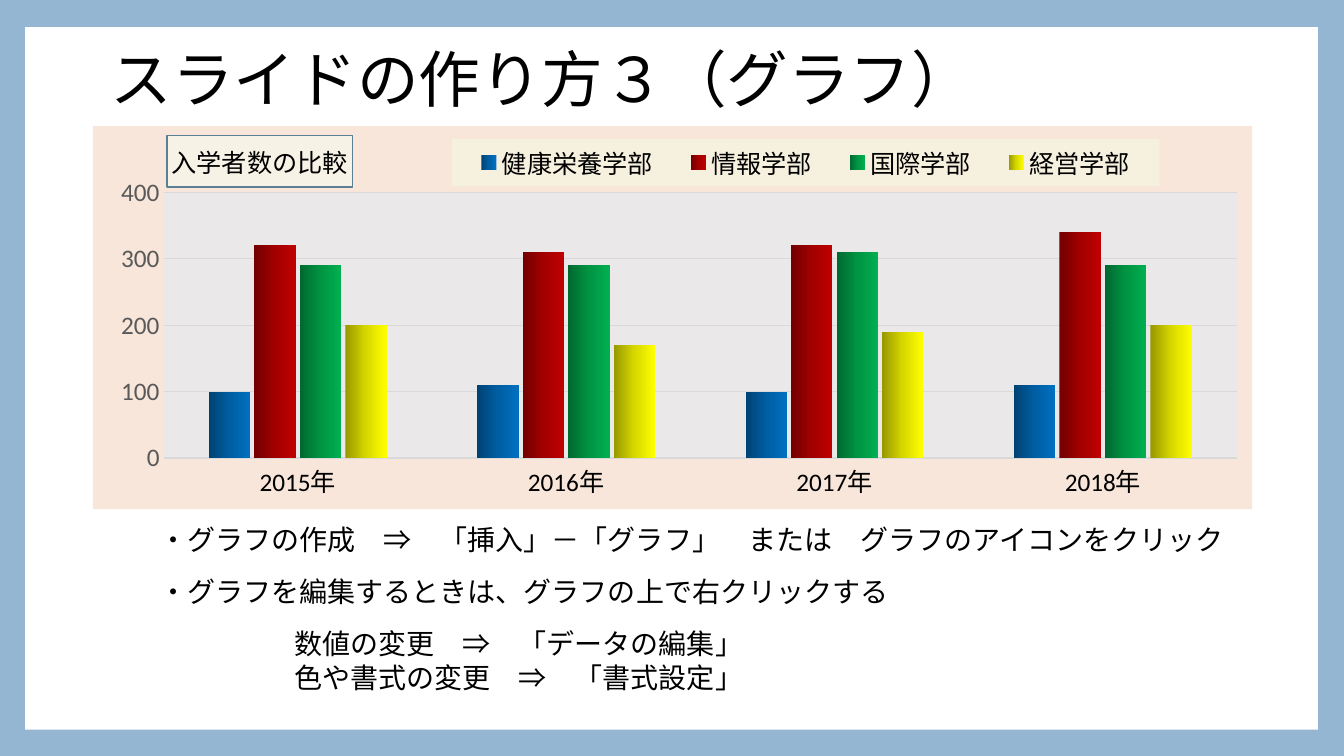
from pptx import Presentation
from pptx.chart.data import CategoryChartData
from pptx.dml.color import RGBColor
from pptx.enum.chart import XL_CHART_TYPE, XL_LEGEND_POSITION, XL_TICK_MARK
from pptx.enum.shapes import MSO_SHAPE
from pptx.enum.text import MSO_ANCHOR
from pptx.oxml import parse_xml
from pptx.util import Inches, Pt

CLUSTERED = XL_CHART_TYPE.COLUMN_CLUSTERED
LEGEND_BOTTOM = XL_LEGEND_POSITION.BOTTOM
NO_TICK = XL_TICK_MARK.NONE
RECTANGLE = MSO_SHAPE.RECTANGLE
MIDDLE, TOP = MSO_ANCHOR.MIDDLE, MSO_ANCHOR.TOP

FONT = "Calibri"
BLACK = RGBColor(0x00, 0x00, 0x00)
WHITE = RGBColor(0xFF, 0xFF, 0xFF)
FRAME_BLUE = RGBColor(0x94, 0xB6, 0xD2)
AXIS_GREY = RGBColor(0x59, 0x59, 0x59)
GRID_GREY = RGBColor(0xD9, 0xD9, 0xD9)
CHART_PEACH = RGBColor(0xF8, 0xE6, 0xDA)
PLOT_GREY = RGBColor(0xEA, 0xE8, 0xE8)
LEGEND_CREAM = RGBColor(0xF6, 0xF0, 0xDF)
CAPTION_CREAM = RGBColor(0xF6, 0xF2, 0xE6)
CAPTION_EDGE = RGBColor(0x5B, 0x7F, 0x95)

YEARS = ["2015年", "2016年", "2017年", "2018年"]
FACULTIES = [
    ("健康栄養学部", (100, 110, 100, 110), ("004272", "005EA2", "0070C0")),
    ("情報学部", (320, 310, 320, 340), ("720000", "A20000", "C00000")),
    ("国際学部", (290, 290, 310, 290), ("00682F", "009443", "00B050")),
    ("経営学部", (200, 170, 190, 200), ("979700", "D7D700", "FFFF00")),
]
NOTES = [
    ((1.48, 5.13, 10.94, 0.44),
     ["・グラフの作成　⇒　「挿入」－「グラフ」　または　グラフのアイコンをクリック"]),
    ((1.48, 5.65, 9.09, 0.44),
     ["・グラフを編集するときは、グラフの上で右クリックする"]),
    ((2.82, 6.17, 7.75, 0.77),
     ["数値の変更　⇒　「データの編集」", "色や書式の変更　⇒　「書式設定」"]),
]

NS = ('xmlns:c="http://schemas.openxmlformats.org/drawingml/2006/chart" '
      'xmlns:a="http://schemas.openxmlformats.org/drawingml/2006/main"')


def set_font(font, size, color=BLACK):
    font.color.rgb = color
    for name, value in {"name": FONT, "size": Pt(size), "bold": False}.items():
        setattr(font, name, value)


def solid_properties(color):
    """Chart part properties: a plain fill without a line."""
    return parse_xml(
        f'<c:spPr {NS}><a:solidFill><a:srgbClr val="{color}"/></a:solidFill>'
        '<a:ln><a:noFill/></a:ln></c:spPr>')


def manual_layout(x, y, size=None, inner=False):
    """Chart part layout, in fractions of the whole chart."""
    target = '<c:layoutTarget val="inner"/>' if inner else ""
    places = {"x": x, "y": y}
    if size:
        places.update(zip("wh", size))
    modes = '<c:xMode val="edge"/><c:yMode val="edge"/>'
    values = "".join(f'<c:{key} val="{value}"/>' for key, value in places.items())
    return parse_xml(f"<c:layout {NS}><c:manualLayout>{target}{modes}{values}"
                     "</c:manualLayout></c:layout>")


def drop_layout(part):
    for layout in part.xpath("./c:layout"):
        part.remove(layout)


def shade_columns(series, shades):
    stops = "".join(
        f'<a:gs pos="{pos}"><a:srgbClr val="{shade}"/></a:gs>'
        for pos, shade in zip((0, 50000, 100000), shades))
    series.format.fill.background()
    no_fill = series.format.fill._xPr.find(
        "{http://schemas.openxmlformats.org/drawingml/2006/main}noFill")
    no_fill.getparent().replace(no_fill, parse_xml(
        f'<a:gradFill {NS}><a:gsLst>{stops}</a:gsLst><a:lin ang="0" scaled="0"/></a:gradFill>'))


def style_axes(chart):
    years, students = chart.category_axis, chart.value_axis
    for axis, color in ((years, BLACK), (students, AXIS_GREY)):
        axis.major_tick_mark = axis.minor_tick_mark = NO_TICK
        set_font(axis.tick_labels.font, 18, color)
    scale = {"minimum_scale": 0, "maximum_scale": 400, "major_unit": 100,
             "has_major_gridlines": True}
    for name, value in scale.items():
        setattr(students, name, value)
    students.format.line.fill.background()
    for line in (years.format.line, students.major_gridlines.format.line):
        line.color.rgb = GRID_GREY
        line.width = Pt(0.75)


def style_caption(chart):
    chart.has_title = True
    caption = chart.chart_title
    caption.text_frame.text = "入学者数の比較"
    set_font(caption.text_frame.paragraphs[0].runs[0].font, 18)
    caption.format.fill.solid()
    caption.format.fill.fore_color.rgb = CAPTION_CREAM
    caption.format.line.color.rgb = CAPTION_EDGE
    caption.format.line.width = Pt(1)
    element = caption._element
    drop_layout(element)
    element.xpath("./c:tx")[0].addnext(manual_layout(0.064, 0.024))


def style_legend(chart):
    chart.has_legend = True
    legend = chart.legend
    legend.position = LEGEND_BOTTOM
    legend.include_in_layout = False
    set_font(legend.font, 18)
    element = legend._element
    drop_layout(element)
    element.xpath("./c:legendPos")[0].addnext(
        manual_layout(0.31, 0.034, (0.61, 0.123)))
    element.xpath("./c:overlay")[0].addnext(solid_properties(LEGEND_CREAM))


def add_enrolment_chart(slide, box):
    data = CategoryChartData()
    data.categories = YEARS
    for name, students, _ in FACULTIES:
        data.add_series(name, students)
    chart = slide.shapes.add_chart(CLUSTERED, *map(Inches, box), data).chart
    set_font(chart.font, 10)
    columns = chart.plots[0]
    for name, value in {"gap_width": 219, "overlap": -10,
                        "vary_by_categories": False}.items():
        setattr(columns, name, value)
    for series, (_, _, shades) in zip(columns.series, FACULTIES):
        shade_columns(series, shades)
    style_axes(chart)
    style_caption(chart)
    style_legend(chart)

    space = chart._chartSpace
    plot_area = space.xpath("./c:chart/c:plotArea")[0]
    drop_layout(plot_area)
    plot_area.insert(0, manual_layout(0.061, 0.173, (0.926, 0.694), inner=True))
    plot_area.append(solid_properties(PLOT_GREY))
    space.xpath("./c:chart")[0].addnext(solid_properties(CHART_PEACH))


def add_text(slide, box, lines, size, anchor=TOP, spacing=None):
    frame = slide.shapes.add_textbox(*map(Inches, box)).text_frame
    frame.word_wrap = True
    frame.vertical_anchor = anchor
    frame.text = "\n".join(lines)
    for paragraph in frame.paragraphs:
        paragraph.line_spacing = spacing
        set_font(paragraph.runs[0].font, size)


def add_backdrop(slide, box):
    slide.background.fill.solid()
    slide.background.fill.fore_color.rgb = FRAME_BLUE
    page = slide.shapes.add_shape(RECTANGLE, *map(Inches, box))
    page.shadow.inherit = False
    page.fill.solid()
    page.fill.fore_color.rgb = WHITE
    page.line.fill.background()


def main():
    deck = Presentation()
    deck.slide_width, deck.slide_height = Inches(13.33), Inches(7.5)
    slide = deck.slides.add_slide(deck.slide_layouts[6])
    add_backdrop(slide, (0.25, 0.27, 12.82, 6.97))
    add_text(slide, (1, 0.3, 11.33, 1.04), ["スライドの作り方３（グラフ）"], 44, MIDDLE, 0.9)
    add_enrolment_chart(slide, (0.92, 1.25, 11.5, 3.8))
    for box, lines in NOTES:
        add_text(slide, box, lines, 20)
    deck.save("out.pptx")


if __name__ == "__main__":
    main()
